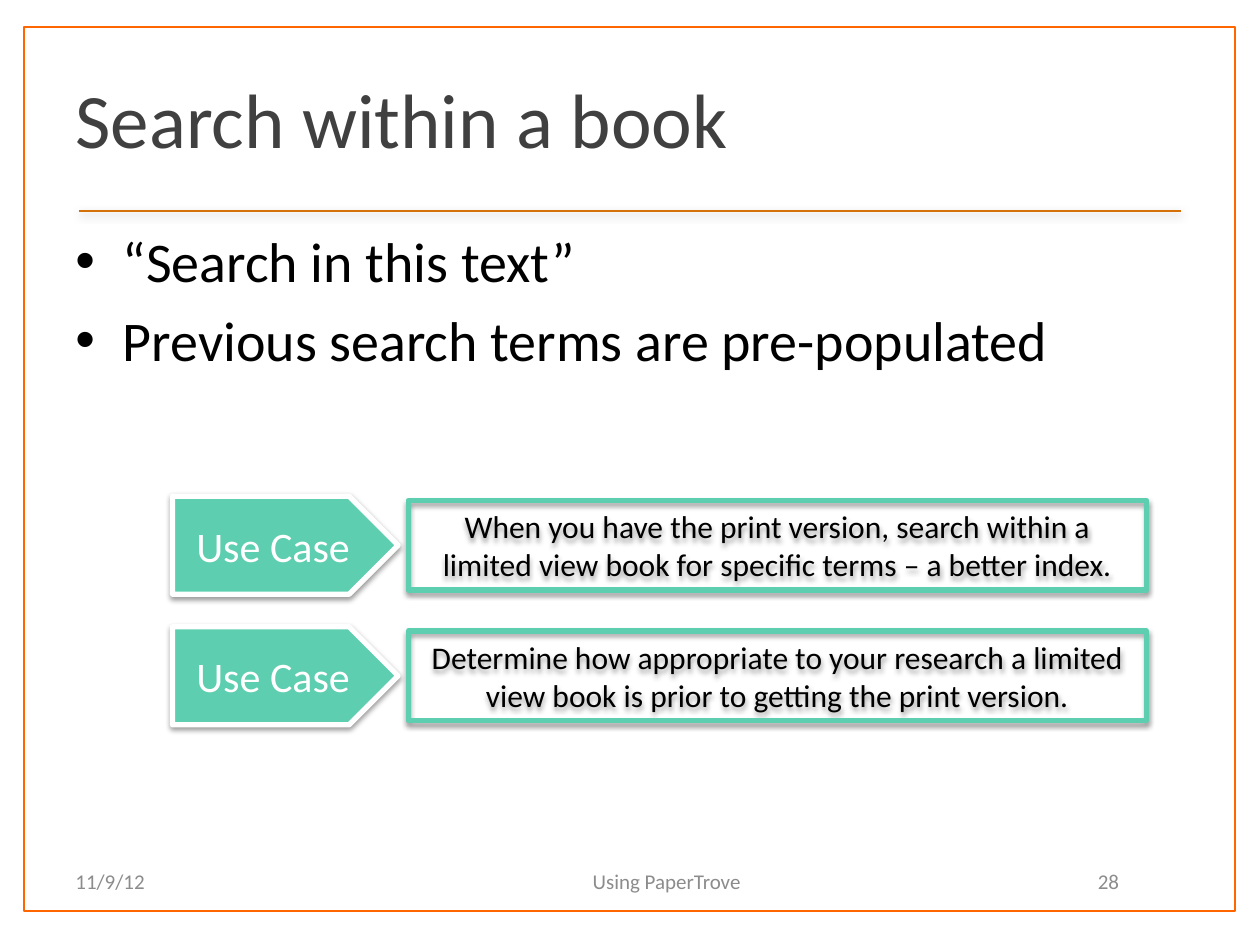
from dataclasses import dataclass

from lxml import etree
from pptx import Presentation
from pptx import util as u
from pptx.dml.color import RGBColor
from pptx.enum import shapes, text
from pptx.oxml import ns

Pt = u.Pt


@dataclass(frozen=True)
class Theme:
    face: str = "Calibri"
    paper: str = "FFFFFF"
    ink: str = "000000"
    heading: str = "404040"
    muted: str = "8C8C8C"
    frame: str = "FF6600"
    rule: str = "D57007"
    accent: str = "5DCEAF"
    title_size: float = 44
    bullet_size: float = 32
    label_size: float = 24
    case_size: float = 18
    footer_size: float = 12


THEME = Theme()
LEFT, CENTER, RIGHT = (text.PP_ALIGN.LEFT, text.PP_ALIGN.CENTER, text.PP_ALIGN.RIGHT)
MIDDLE, TOP = text.MSO_ANCHOR.MIDDLE, text.MSO_ANCHOR.TOP
RULE_SHADOW = {"alpha": 35, "blur": 5, "dist": 1.8}
CASE_SHADOW = {"alpha": 38, "blur": 3.1, "dist": 1.6}


def points(box):
    return [Pt(length) for length in box]


def write(shape, lines, size, color, align=LEFT, anchor=TOP):
    """Fill a shape with evenly formatted paragraphs."""
    frame = shape.text_frame
    frame_format = {"word_wrap": True, "auto_size": text.MSO_AUTO_SIZE.NONE,
                    "vertical_anchor": anchor}
    for name, value in frame_format.items():
        setattr(frame, name, value)
    frame.text = "\n".join(lines)
    for paragraph in frame.paragraphs:
        paragraph.alignment = align
        for name, value in {"name": THEME.face, "size": Pt(size)}.items():
            setattr(paragraph.font, name, value)
        paragraph.font.color.rgb = RGBColor.from_string(color)
    return frame


def outline(shape, color, width):
    shape.line.color.rgb = RGBColor.from_string(color)
    shape.line.width = Pt(width)


def paint(shape, color):
    if color is None:
        shape.fill.background()
    else:
        shape.fill.solid()
        shape.fill.fore_color.rgb = RGBColor.from_string(color)


def cast_shadow(shape, look):
    """Add a soft shadow that falls straight down."""
    effects = etree.SubElement(shape._element.spPr, ns.qn("a:effectLst"))
    shadow = etree.SubElement(
        effects, ns.qn("a:outerShdw"), blurRad=str(Pt(look["blur"])),
        dist=str(Pt(look["dist"])), dir="5400000", rotWithShape="0")
    tint = etree.SubElement(shadow, ns.qn("a:srgbClr"), val=THEME.ink)
    etree.SubElement(tint, ns.qn("a:alpha"), val=str(look["alpha"] * 1000))


def add_page_frame(slide, box):
    border = slide.shapes.add_shape(shapes.MSO_SHAPE.RECTANGLE, *points(box))
    border.shadow.inherit = False
    paint(border, THEME.paper)
    outline(border, THEME.frame, 1)


def add_heading(slide, box, wording):
    left, top, width, height = box
    # Rule below the title, slightly inset from the title box
    inset, rule_y = 9, top + height + 8.6
    rule = slide.shapes.add_connector(
        shapes.MSO_CONNECTOR.STRAIGHT,
        *points((left + inset, rule_y, left + width - inset, rule_y)))
    outline(rule, THEME.rule, 1)
    cast_shadow(rule, RULE_SHADOW)

    title = slide.shapes.title
    title.left, title.top, title.width, title.height = points(box)
    write(title, [wording], THEME.title_size, THEME.heading, anchor=MIDDLE)
    # Bring the title in front of the filled page frame
    slide.shapes._spTree.append(title._element)


def add_bullets(slide, box, items):
    body = slide.shapes.add_textbox(*points(box))
    frame = write(body, items, THEME.bullet_size, THEME.ink)
    for index, paragraph in enumerate(frame.paragraphs):
        properties = paragraph._p.get_or_add_pPr()
        properties.set("marL", str(Pt(27)))
        properties.set("indent", str(-Pt(27)))
        bullet_font = etree.Element(ns.qn("a:buFont"), typeface="Arial")
        bullet = etree.Element(ns.qn("a:buChar"), char="•")
        properties[:0] = [bullet_font, bullet]
        if index:
            paragraph.space_before = Pt(0.2 * THEME.bullet_size)


def add_use_case(slide, box, wording):
    """Place an arrow label beside its outlined description."""
    left, top, width, height = box
    label_width, gap, margin = 128.9, 5.8, 2.4
    case_left = label_width + gap
    parts = [
        (shapes.MSO_SHAPE.PENTAGON, (left, top, label_width, height),
         THEME.accent, THEME.paper, "Use Case", THEME.label_size, THEME.paper),
        (shapes.MSO_SHAPE.RECTANGLE,
         (left + case_left, top + margin, width - case_left, height - 2 * margin),
         None, THEME.accent, wording, THEME.case_size, THEME.ink),
    ]
    for preset, place, fill, edge, words, size, color in parts:
        part = slide.shapes.add_shape(preset, *points(place))
        paint(part, fill)
        outline(part, edge, 3)
        cast_shadow(part, CASE_SHADOW)
        write(part, [words], size, color, CENTER, MIDDLE)


def add_footer(slide, box, entries):
    left, top, _, height = box
    for offset, width, wording, align in entries:
        entry = slide.shapes.add_textbox(*points((left + offset, top, width, height)))
        write(entry, [wording], THEME.footer_size, THEME.muted, align, MIDDLE)


def main():
    deck = Presentation()
    deck.slide_width, deck.slide_height = Pt(720), Pt(540)
    slide = deck.slides.add_slide(deck.slide_layouts[5])

    add_page_frame(slide, (13.8, 15.6, 692, 505))
    add_heading(slide, (36, 22, 648, 90), "Search within a book")
    add_bullets(slide, (36, 126, 648, 363),
                ["“Search in this text”", "Previous search terms are pre-populated"])

    use_cases = [
        "When you have the print version, search within a limited view book"
        " for specific terms – a better index.",
        "Determine how appropriate to your research a limited view book is"
        " prior to getting the print version.",
    ]
    for row, wording in enumerate(use_cases):
        add_use_case(slide, (98.6, 283.6 + 74.6 * row, 556.6, 56), wording)

    add_footer(slide, (36, 489, 648, 29), [
        (0, 151, "11/9/12", LEFT),
        (177, 336, "Using PaperTrove", CENTER),
        (553, 57.6, "28", RIGHT),
    ])
    deck.save("out.pptx")


if __name__ == "__main__":
    main()
